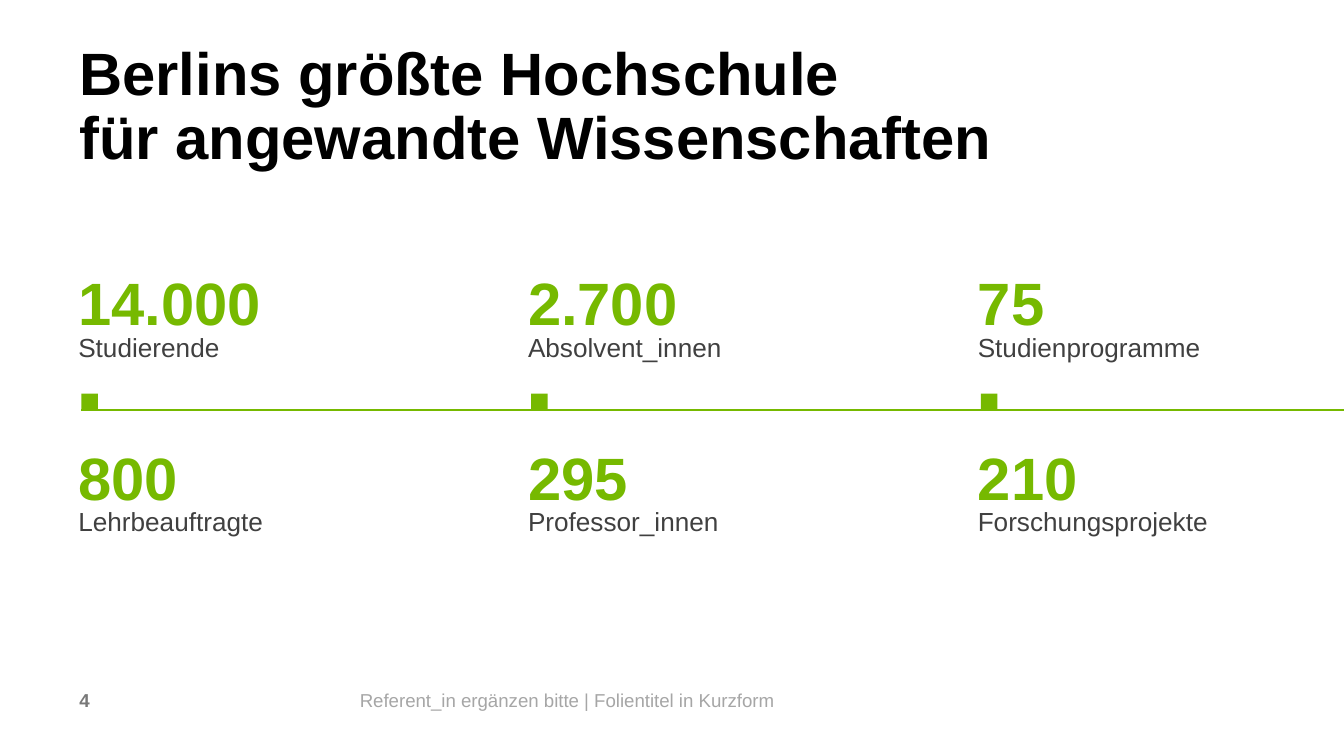
import pptx
import pptx.util
import pptx.dml.color
import pptx.enum.shapes
import pptx.enum.text
import lxml.etree
from pptx.util import Cm, Pt

COLORS = {
    "title": "000000",
    "accent": "76B900",
    "label": "404040",
    "footer": "A6A6A6",
    "number": "787878",
}
FONT = "Arial"
ANCHOR = pptx.enum.text.MSO_ANCHOR
WIDTH, HEIGHT = 25.4, 14.29
COLUMN_STEP = 8.5
MARKER = 0.31
ROWS = [
    [("14.000", "Studierende"), ("2.700", "Absolvent_innen"), ("75", "Studienprogramme")],
    [("800", "Lehrbeauftragte"), ("295", "Professor_innen"), ("210", "Forschungsprojekte")],
]


def rgb(name):
    return pptx.dml.color.RGBColor.from_string(COLORS[name])


def set_font(font, size, color, bold=False):
    font.name = FONT
    font.size = Pt(size)
    font.bold = bold
    font.color.rgb = rgb(color)


def set_frame(tf, anchor=ANCHOR.TOP):
    tf.margin_left = tf.margin_top = tf.margin_right = tf.margin_bottom = 0
    tf.word_wrap = True
    tf.auto_size = pptx.enum.text.MSO_AUTO_SIZE.NONE
    tf.vertical_anchor = anchor


def add_title(slide, x, y, w, h):
    sp = slide.shapes.title
    sp.left, sp.top, sp.width, sp.height = Cm(x), Cm(y), Cm(w), Cm(h)
    tf = sp.text_frame
    set_frame(tf)
    tf.text = "Berlins größte Hochschule\vfür angewandte Wissenschaften"
    p = tf.paragraphs[0]
    p.alignment = pptx.enum.text.PP_ALIGN.LEFT
    p.line_spacing = Pt(34)
    set_font(p.font, 32, "title", True)


def add_stat(slide, x, y, w, h, value, label):
    tf = slide.shapes.add_textbox(Cm(x), Cm(y), Cm(w), Cm(h)).text_frame
    set_frame(tf, ANCHOR.BOTTOM)
    p = tf.paragraphs[0]
    p.line_spacing = 0.8
    r = p.add_run()
    r.text = value
    set_font(r.font, 32, "accent", True)
    p.add_line_break()
    r = p.add_run()
    r.text = label
    set_font(r.font, 14, "label")


def add_stats(slide, x, y, row_step):
    for i, row in enumerate(ROWS):
        for j, (value, label) in enumerate(row):
            add_stat(slide, x + j * COLUMN_STEP, y + i * row_step, 5, 1.57, value, label)


def add_timeline(slide, x, y, w):
    line = slide.shapes.add_connector(
        pptx.enum.shapes.MSO_CONNECTOR.STRAIGHT, Cm(x), Cm(y), Cm(x + w), Cm(y))
    line.line.color.rgb = rgb("accent")
    line.line.width = Pt(1)
    lxml.etree.SubElement(line._element.spPr, pptx.oxml.ns.qn("a:effectLst"))
    for j in range(len(ROWS[0])):
        sp = slide.shapes.add_shape(
            pptx.enum.shapes.MSO_SHAPE.RECTANGLE,
            Cm(x + j * COLUMN_STEP), Cm(y - MARKER), Cm(MARKER), Cm(MARKER))
        sp.shadow.inherit = False
        sp.fill.solid()
        sp.fill.fore_color.rgb = rgb("accent")
        sp.line.fill.background()


def add_footer(slide, x, y, h):
    for left, width, text, color, bold in [
        (x, 4.8, "4", "number", True),
        (x + 5.3, 15.24, "Referent_in ergänzen bitte | Folientitel in Kurzform", "footer", False),
    ]:
        tf = slide.shapes.add_textbox(Cm(left), Cm(y), Cm(width), Cm(h)).text_frame
        set_frame(tf)
        tf.text = text
        set_font(tf.paragraphs[0].font, 10, color, bold)


def main():
    prs = pptx.Presentation()
    prs.slide_width, prs.slide_height = Cm(WIDTH), Cm(HEIGHT)
    slide = prs.slides.add_slide(prs.slide_layouts[5])
    add_title(slide, 1.5, 0.84, 20.9, 1.25)
    add_stats(slide, 1.48, 5.28, 3.3)
    add_timeline(slide, 1.54, 7.75, WIDTH - 1.54)
    add_footer(slide, 1.5, 13.03, 0.5)
    prs.save("out.pptx")


if __name__ == "__main__":
    main()
